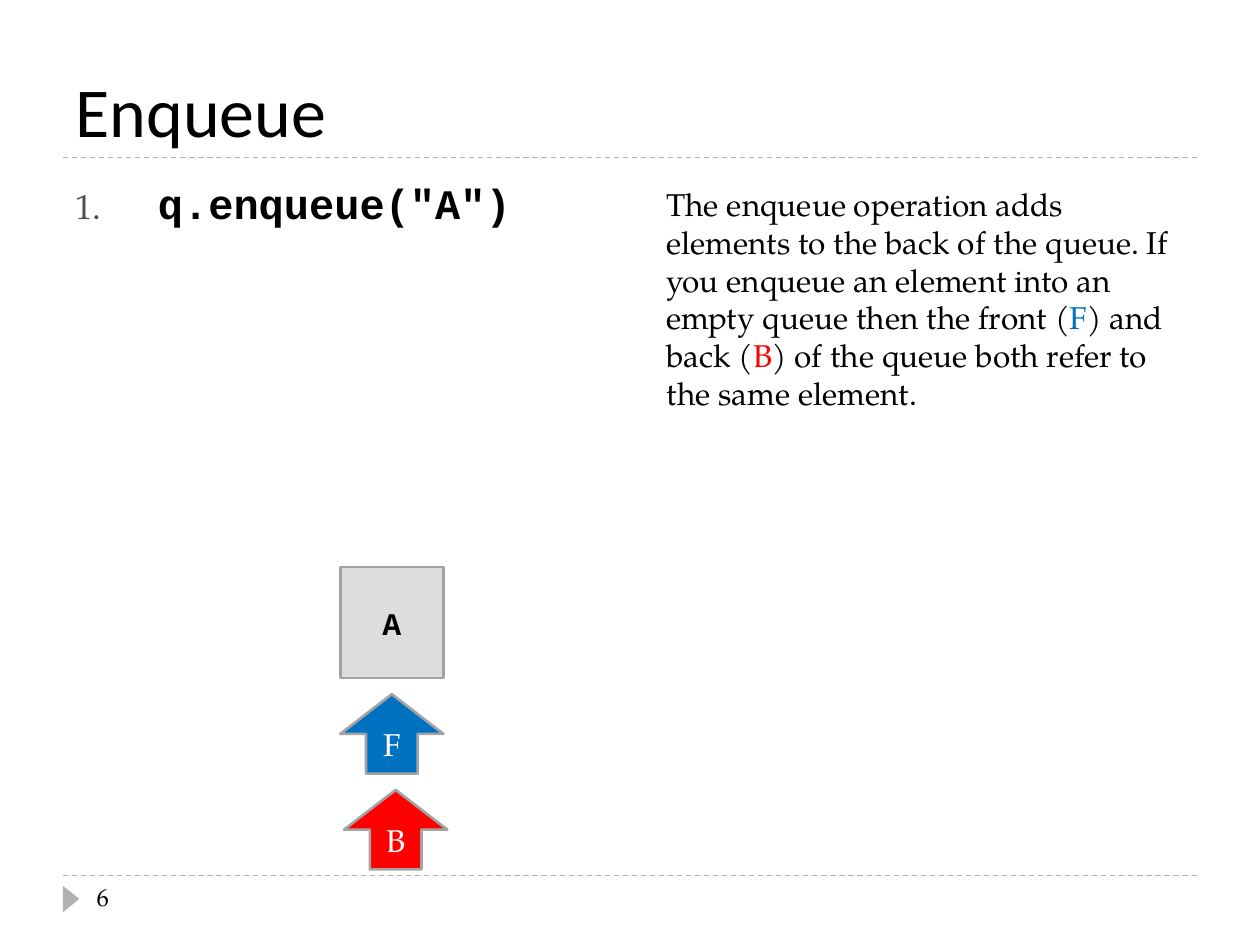
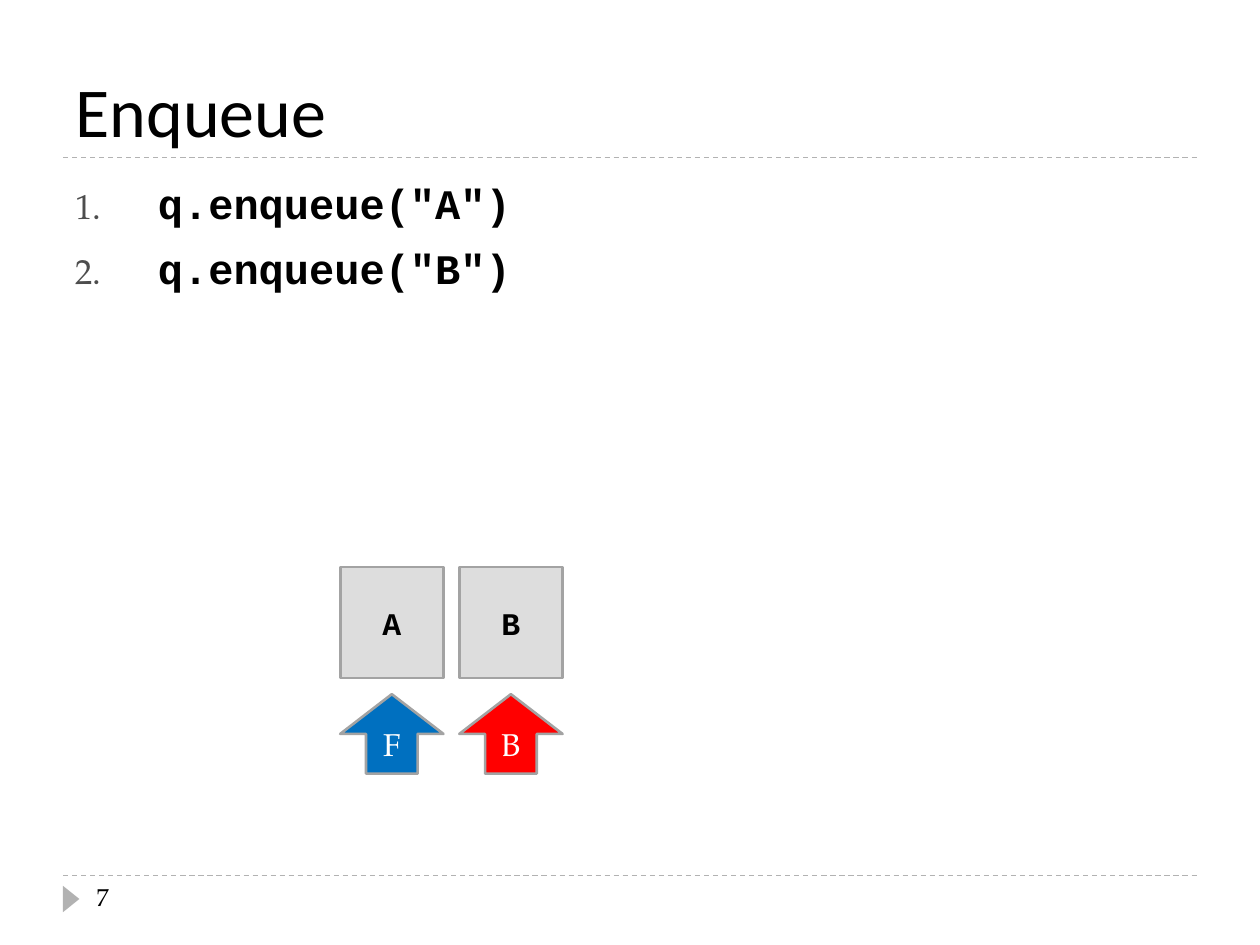
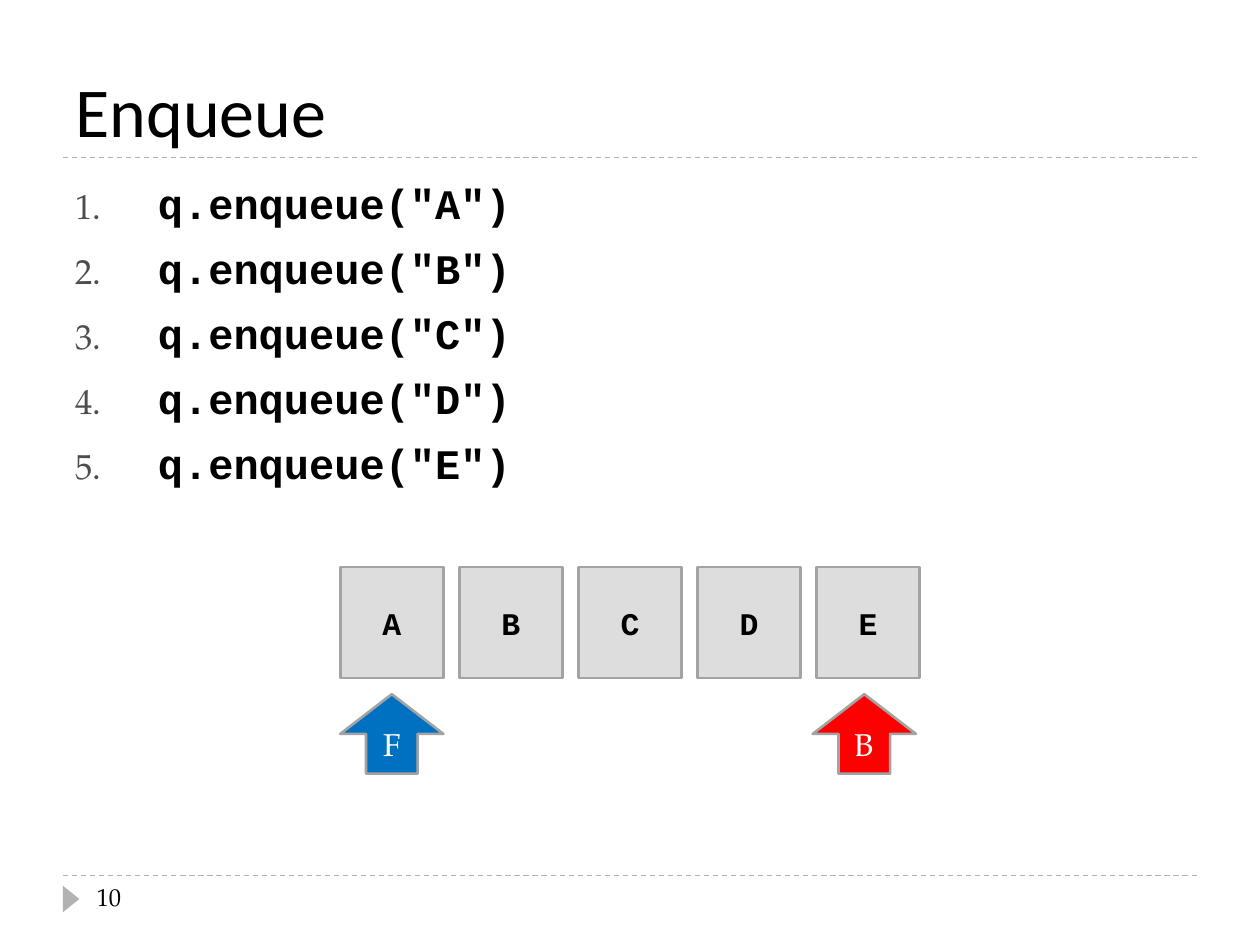
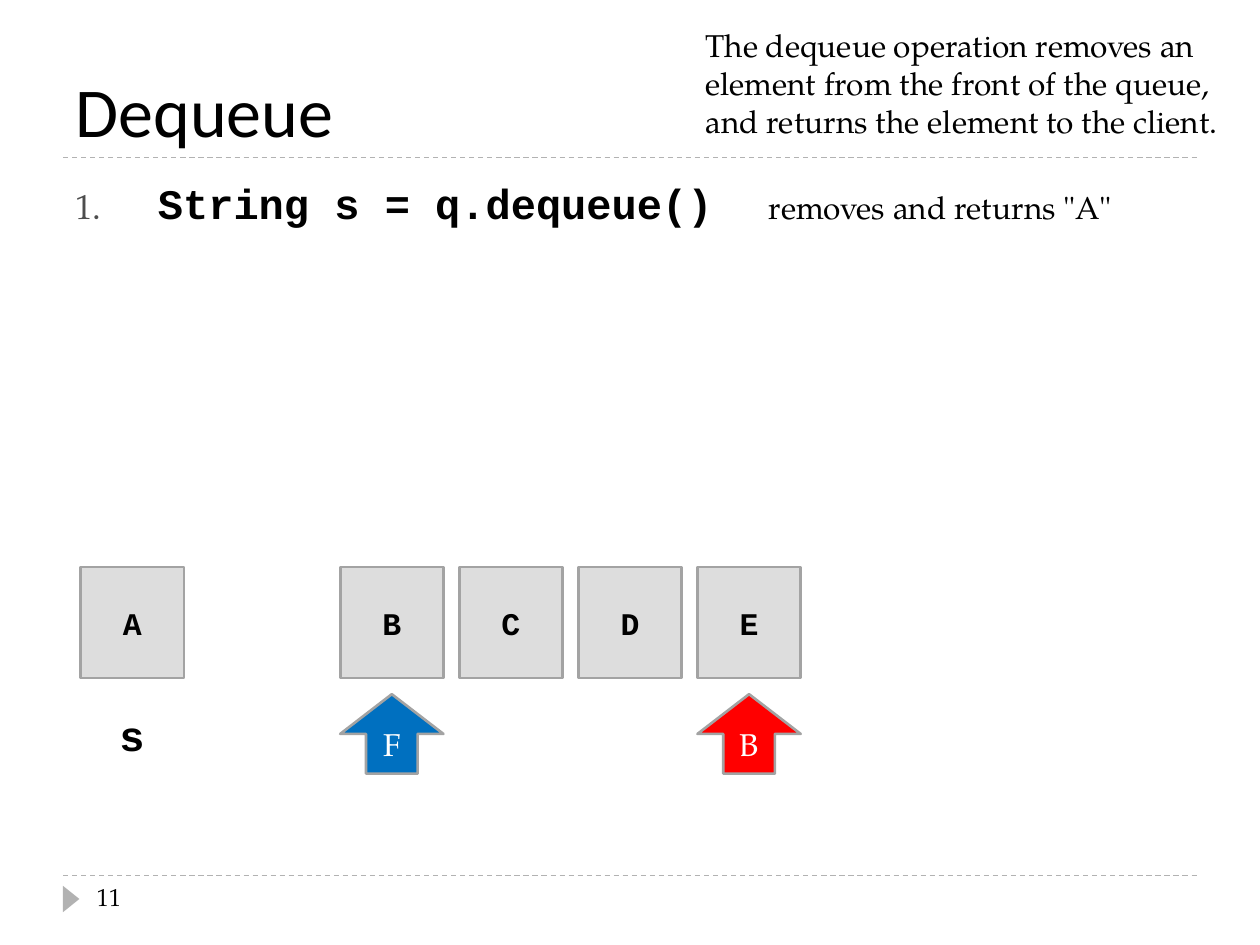
import pptx
import pptx.util
import pptx.dml.color
import pptx.enum.dml
import pptx.enum.shapes
import pptx.enum.text
import pptx.oxml
import pptx.oxml.ns
import lxml.etree

Pt = pptx.util.Pt
SHAPE = pptx.enum.shapes.MSO_SHAPE
ANCHOR = pptx.enum.text.MSO_ANCHOR
ALIGN = pptx.enum.text.PP_ALIGN

SERIF, SANS, MONO = "TeX Gyre Pagella", "Calibri", "Courier New"
BLACK, WHITE, RULE, NUMBER = "000000", "FFFFFF", "B2B2B2", "4D4D4D"
CELL, EDGE, BLUE, RED = "DDDDDD", "A3A3A3", "0070C0", "FF0000"

CELL_LEFT, CELL_TOP, CELL_W, CELL_H, PITCH = 194.4, 324, 59, 63.4, 68.05
ARROW_TOP, ARROW_H = 396.7, 45.4
RETURNED_LEFT = 46.1

ENQUEUE_NOTE = [
    ("The enqueue operation adds elements to the back of the queue. If you enqueue "
     "an element into an empty queue then the front (", BLACK),
    ("F", BLUE), (") and back (", BLACK), ("B", RED),
    (") of the queue both refer to the same element.", BLACK)]
DEQUEUE_NOTE = [
    ("The dequeue operation removes an element from the front of the queue, "
     "and returns the element to the client.", BLACK)]

SLIDES = [
    dict(number=6, title="Enqueue", steps=[('q.enqueue("A")', "")], queue="A",
         back_shift=(2.2, 54.7), note=(ENQUEUE_NOTE, (373.7, 102.2, 308.2, 138.2))),
    dict(number=7, title="Enqueue", queue="AB",
         steps=[(f'q.enqueue("{c}")', "") for c in "AB"]),
    dict(number=10, title="Enqueue", queue="ABCDE", back_shift=(-2.2, 0),
         steps=[(f'q.enqueue("{c}")', "") for c in "ABCDE"]),
    dict(number=11, title="Dequeue", queue="BCDE", returned=("A", "s"),
         steps=[("String s = q.dequeue()\t", 'removes and returns "A"')],
         note=(DEQUEUE_NOTE, (396, 11.5, 308.2, 72.7))),
]


def rgb(color):
    """Turn a hex string into a colour."""
    return pptx.dml.color.RGBColor.from_string(color)


def write(p, text, font=SERIF, size=18, color=BLACK, bold=False):
    """Add a formatted run to a paragraph."""
    r = p.add_run()
    r.text = text
    r.font.name, r.font.size, r.font.bold = font, Pt(size), bold
    r.font.color.rgb = rgb(color)


def place(sp, left, top, width, height):
    """Move and size a shape."""
    sp.left, sp.top, sp.width, sp.height = Pt(left), Pt(top), Pt(width), Pt(height)


def text_box(s, box, wrap=True):
    """Add a text box and return its first paragraph."""
    tf = s.shapes.add_textbox(*map(Pt, box)).text_frame
    tf.word_wrap = wrap
    return tf.paragraphs[0]


def add_figure(s, kind, box, fill, edge=None):
    """Add a filled preset shape without a shadow."""
    sp = s.shapes.add_shape(kind, *map(Pt, box))
    sp.shadow.inherit = False
    sp.fill.solid()
    sp.fill.fore_color.rgb = rgb(fill)
    if edge:
        sp.line.color.rgb = rgb(edge)
        sp.line.width = Pt(1.5)
    else:
        sp.line.fill.background()
    return sp


def add_label(s, kind, box, fill, text, **fmt):
    """Add an outlined shape with centred text."""
    tf = add_figure(s, kind, box, fill, EDGE).text_frame
    tf.vertical_anchor = ANCHOR.MIDDLE
    p = tf.paragraphs[0]
    p.alignment = ALIGN.CENTER
    write(p, text, **fmt)


def add_cell(s, left, letter):
    """Add one queue element."""
    add_label(s, SHAPE.RECTANGLE, (left, CELL_TOP, CELL_W, CELL_H), CELL, letter,
              font=MONO, bold=True)


def add_arrow(s, left, top, fill, letter):
    """Add a front or back marker."""
    add_label(s, SHAPE.UP_ARROW, (left, top, CELL_W, ARROW_H), fill, letter, color=WHITE)


def add_frame(s, number):
    """Add the dashed rules, the footer mark and the slide number."""
    for y in (500.4, 90):
        line = s.shapes.add_connector(pptx.enum.shapes.MSO_CONNECTOR.STRAIGHT,
                                      Pt(36), Pt(y), Pt(684), Pt(y))
        line.line.color.rgb = rgb(RULE)
        line.line.width = Pt(0.75)
        line.line.dash_style = pptx.enum.dml.MSO_LINE.DASH
        sp_pr = line._element.spPr
        lxml.etree.SubElement(sp_pr, pptx.oxml.ns.qn("a:effectLst"))
    mark = add_figure(s, SHAPE.ISOSCELES_TRIANGLE, (33.1, 509, 15.1, 9.4), RULE)
    mark.rotation = 90
    write(text_box(s, (48.2, 500.4, 156.2, 28.8)), str(number), size=14)


def add_title(s, text):
    """Fill the title placeholder."""
    place(s.shapes.title, 36, 12.2, 648, 77.8)
    tf = s.shapes.title.text_frame
    tf.auto_size = pptx.enum.text.MSO_AUTO_SIZE.NONE
    tf.vertical_anchor = ANCHOR.BOTTOM
    p = tf.paragraphs[0]
    p.alignment = ALIGN.LEFT
    write(p, text, font=SANS, size=40)


def number_paragraph(p):
    """Give a paragraph a hanging automatic number."""
    p.space_before = Pt(6)
    pr = p._p.get_or_add_pPr()
    pr.set("marL", str(Pt(40.5)))
    pr.set("indent", str(-Pt(40.5)))
    qn, sub = pptx.oxml.ns.qn, lxml.etree.SubElement
    sub(sub(pr, qn("a:buClr")), qn("a:srgbClr"), val=NUMBER)
    sub(pr, qn("a:buSzPct"), val="76000")
    sub(pr, qn("a:buFont"), typeface=SERIF)
    sub(pr, qn("a:buAutoNum"), type="arabicPeriod")


def add_steps(s, steps):
    """Fill the body placeholder with numbered code lines."""
    body = s.placeholders[1]
    place(body, 36, 95.8, 648, 388.8)
    tf = body.text_frame
    tf.auto_size = pptx.enum.text.MSO_AUTO_SIZE.NONE
    for i, (code, remark) in enumerate(steps):
        p = tf.add_paragraph() if i else tf.paragraphs[0]
        number_paragraph(p)
        write(p, " ", size=26)
        write(p, code, font=MONO, size=24, bold=True)
        if remark:
            write(p, remark)


def add_queue(s, queue, back_shift):
    """Draw the queue with its front and back markers."""
    lefts = [CELL_LEFT + i * PITCH for i in range(len(queue))]
    for left, letter in zip(lefts, queue):
        add_cell(s, left, letter)
    dx, dy = back_shift
    add_arrow(s, lefts[0], ARROW_TOP, BLUE, "F")
    add_arrow(s, lefts[-1] + dx, ARROW_TOP + dy, RED, "B")


def add_returned(s, letter, name):
    """Draw the element taken from the queue above its variable name."""
    add_cell(s, RETURNED_LEFT, letter)
    p = text_box(s, (61.2, 401.8, 28.8, 36), wrap=False)
    write(p, name, font=MONO, size=24, bold=True)


def main():
    """Build the deck."""
    prs = pptx.Presentation()
    prs.slide_width, prs.slide_height = Pt(720), Pt(540)
    for data in SLIDES:
        s = prs.slides.add_slide(prs.slide_layouts[1])
        add_frame(s, data["number"])
        add_title(s, data["title"])
        add_steps(s, data["steps"])
        add_queue(s, data["queue"], data.get("back_shift", (0, 0)))
        if "note" in data:
            runs, box = data["note"]
            p = text_box(s, box)
            for text, color in runs:
                write(p, text, color=color)
        if "returned" in data:
            add_returned(s, *data["returned"])
    prs.save("out.pptx")


if __name__ == "__main__":
    main()
